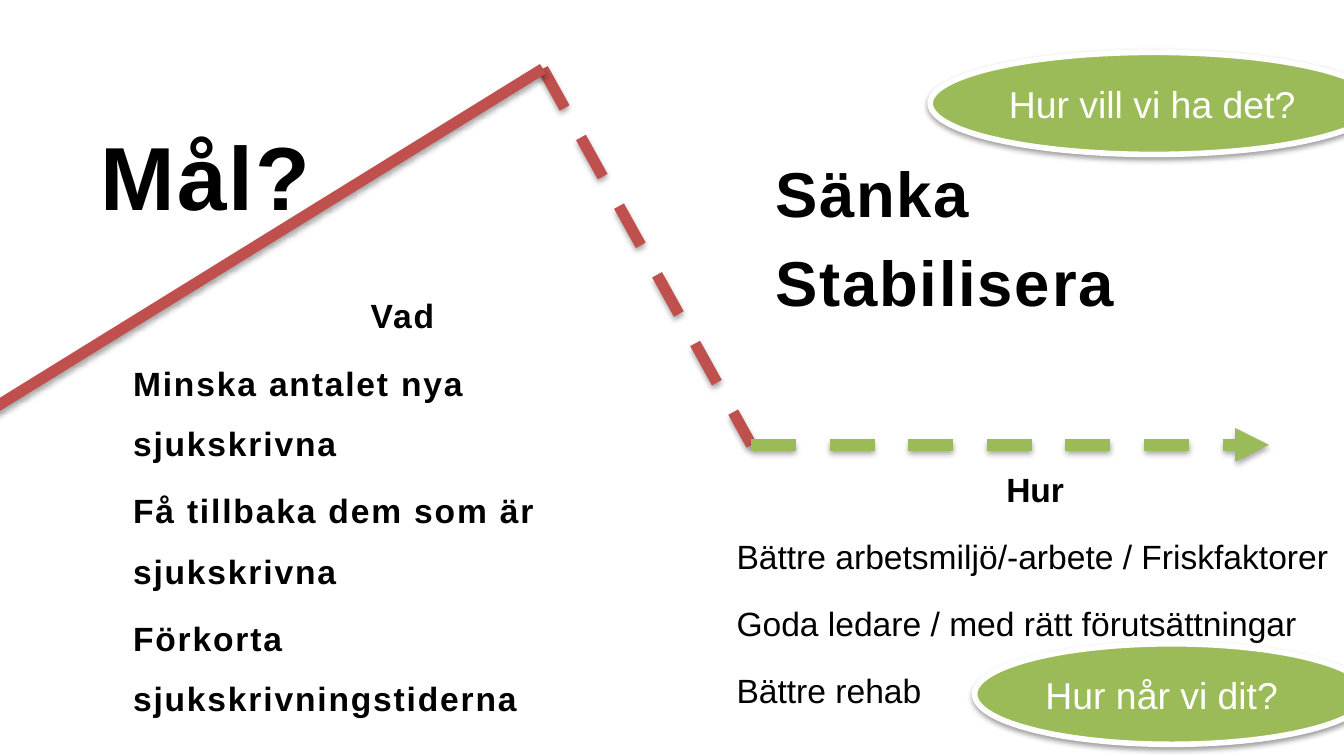
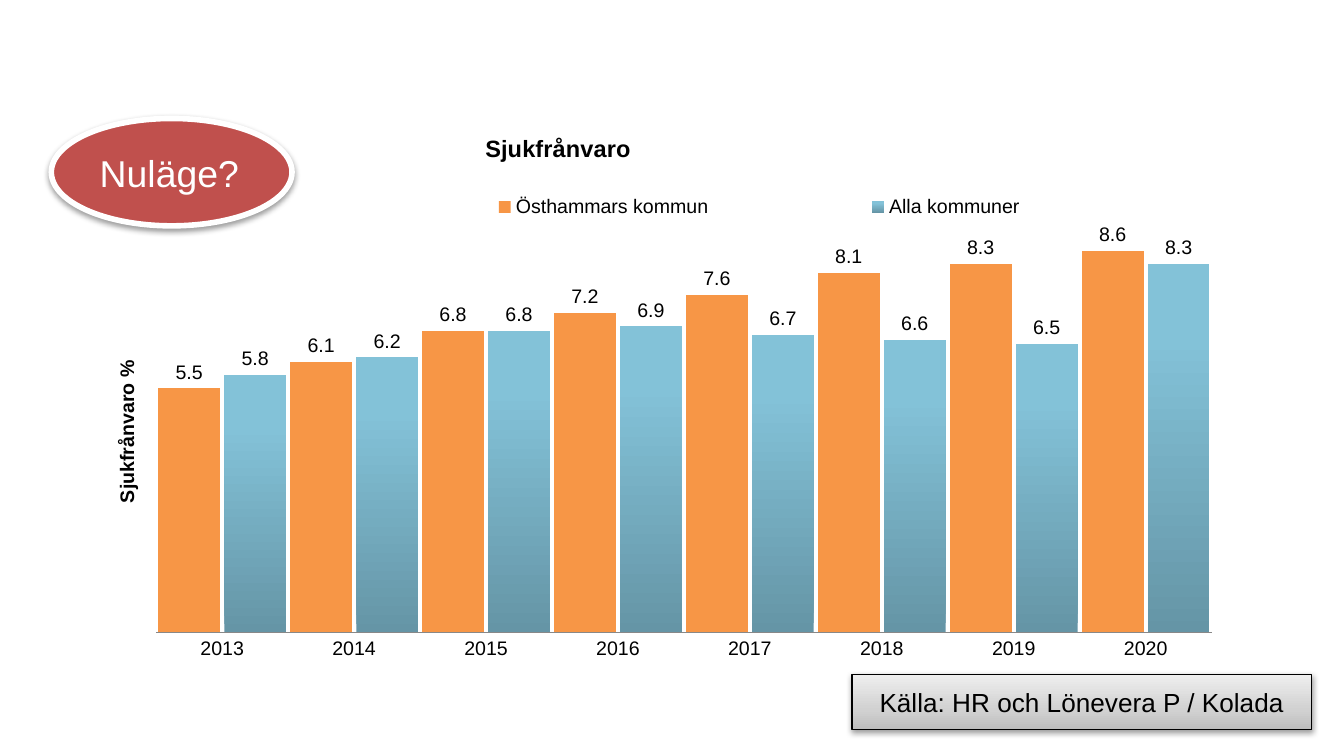
from lxml.etree import SubElement
from pptx import Presentation
from pptx.chart.data import CategoryChartData
from pptx.dml.color import RGBColor
from pptx.enum.chart import XL_CHART_TYPE, XL_LABEL_POSITION, XL_LEGEND_POSITION, XL_TICK_MARK
from pptx.enum.dml import MSO_LINE
from pptx.enum.shapes import MSO_CONNECTOR, MSO_SHAPE
from pptx.enum.text import MSO_ANCHOR, MSO_AUTO_SIZE, PP_ALIGN
from pptx.oxml.ns import qn
from pptx.util import Cm, Pt

FONT = "Arial"
BLACK = RGBColor(0x00, 0x00, 0x00)
WHITE = RGBColor(0xFF, 0xFF, 0xFF)
GREY = RGBColor(0x88, 0x88, 0x88)
RED = RGBColor(0xC0, 0x50, 0x4D)
GREEN = RGBColor(0x9B, 0xBB, 0x59)
ORANGE = RGBColor(0xF7, 0x96, 0x46)
SILVER_STOPS = [
    (0, RGBColor(0xBD, 0xBD, 0xBD)),
    (35, RGBColor(0xD1, 0xD1, 0xD1)),
    (100, RGBColor(0xEE, 0xEE, 0xEE)),
]
BLUE_STOPS = [
    (0, RGBColor(0x65, 0x95, 0xA6)),
    (80, RGBColor(0x83, 0xC2, 0xD8)),
    (100, RGBColor(0x82, 0xC4, 0xDB)),
]

GOAL = ["Mål?"]
AIMS = ["Sänka", "Stabilisera"]
WHAT = [
    "Vad",
    "Minska antalet nya sjukskrivna",
    "Få tillbaka dem som är sjukskrivna",
    "Förkorta sjukskrivningstiderna",
]
HOW = [
    "Hur",
    "Bättre arbetsmiljö/-arbete / Friskfaktorer",
    "Goda ledare / med rätt förutsättningar",
    "Bättre rehab",
]
GOAL_QUESTIONS = [
    ("Hur når vi dit?", (18.42, 12.17, 7.44, 1.9)),
    ("Hur vill vi ha det?", (17.58, 0.99, 8.46, 1.93)),
]
START, PEAK, VALLEY, FUTURE = (-0.58, 8), (10.26, 1.3), (14.2, 8.41), (23.98, 8.41)
TREND = [
    (PEAK, VALLEY, RED, True, False),
    (VALLEY, FUTURE, GREEN, True, True),
    (PEAK, START, RED, False, False),
]

CHART_TITLE = "Sjukfrånvaro"
AXIS_TITLE = "Sjukfrånvaro %"
YEARS = [str(year) for year in range(2013, 2021)]
ABSENCE = {
    "Östhammars kommun": [5.5, 6.1, 6.8, 7.2, 7.6, 8.1, 8.3, 8.6],
    "Alla kommuner": [5.8, 6.2, 6.8, 6.9, 6.7, 6.6, 6.5, 8.3],
}
SOURCE = "Källa: HR och Lönevera P / Kolada"


def write_text(frame, lines, size=18, color=BLACK, bold=False, heading=False,
               line_spacing=None, tracking=0, anchor=MSO_ANCHOR.TOP,
               align=PP_ALIGN.LEFT, top_inset=0.13):
    frame.word_wrap = True
    frame.auto_size = MSO_AUTO_SIZE.NONE
    frame.vertical_anchor = anchor
    frame.margin_top = Cm(top_inset)
    for index, line in enumerate(lines):
        para = frame.paragraphs[0] if index == 0 else frame.add_paragraph()
        is_heading = heading and index == 0
        para.alignment = PP_ALIGN.CENTER if is_heading else align
        para.space_before = Pt(size * 0.2 if index else 0)
        if line_spacing:
            para.line_spacing = line_spacing
        properties = para._p.get_or_add_pPr()
        properties.set("marL", "0")
        properties.set("indent", "0")
        SubElement(properties, qn("a:buNone"))
        span = para.add_run()
        span.text = line
        font = span.font
        font.name, font.size, font.color.rgb = FONT, Pt(size), color
        font.bold = bold or is_heading
        if tracking:
            font._element.set("spc", str(tracking))


def move(shape, area):
    shape.left, shape.top, shape.width, shape.height = map(Cm, area)


def cast_shadow(shape, opacity=38, distance=1.6):
    effects = SubElement(shape._element.spPr, qn("a:effectLst"))
    shadow = SubElement(effects, qn("a:outerShdw"), blurRad=str(Pt(3.1)),
                        dist=str(Pt(distance)), dir="5400000", rotWithShape="0")
    black = SubElement(shadow, qn("a:srgbClr"), val=str(BLACK))
    SubElement(black, qn("a:alpha"), val=str(opacity * 1000))


def fill_gradient(fill, properties, stops):
    fill.gradient()
    gradient = properties.find(qn("a:gradFill"))
    stop_list = gradient.find(qn("a:gsLst"))
    for old_stop in list(stop_list):
        stop_list.remove(old_stop)
    for position, color in stops:
        stop = SubElement(stop_list, qn("a:gs"), pos=str(position * 1000))
        SubElement(stop, qn("a:srgbClr"), val=str(color))
    gradient.find(qn("a:lin")).set("ang", "16200000")


def add_oval(page, text, area, color):
    oval = page.shapes.add_shape(MSO_SHAPE.OVAL, *map(Cm, area))
    oval.fill.solid()
    oval.fill.fore_color.rgb = color
    oval.line.color.rgb = WHITE
    oval.line.width = Pt(3)
    cast_shadow(oval)
    write_text(oval.text_frame, [text], size=20, color=WHITE, anchor=MSO_ANCHOR.MIDDLE)


def add_trend(page):
    group = page.shapes.add_group_shape()
    for begin, end, color, dashed, arrow in TREND:
        line = group.shapes.add_connector(MSO_CONNECTOR.STRAIGHT, *map(Cm, begin + end))
        line.line.color.rgb = color
        line.line.width = Pt(6)
        if dashed:
            line.line.dash_style = MSO_LINE.DASH
        if arrow:
            SubElement(line._element.spPr.find(qn("a:ln")), qn("a:tailEnd"), type="triangle")
        cast_shadow(line, opacity=35, distance=1.8)


def place_part(element, index, inner=False, **position):
    for old_layout in element.findall(qn("c:layout")):
        element.remove(old_layout)
    layout = SubElement(element, qn("c:layout"))
    element.insert(index, layout)
    manual = SubElement(layout, qn("c:manualLayout"))
    if inner:
        SubElement(manual, qn("c:layoutTarget"), val="inner")
    for key in ("x", "y"):
        SubElement(manual, qn(f"c:{key}Mode"), val="edge")
    for key, value in position.items():
        SubElement(manual, qn(f"c:{key}"), val=str(value))


def set_chart_title(owner, title, text, size, **position):
    owner.has_title = True
    write = title.text_frame
    write.text = text
    font = write.paragraphs[0].runs[0].font
    font.name, font.size, font.bold, font.color.rgb = FONT, Pt(size), True, BLACK
    place_part(title._element, 1, **position)


def add_absence_chart(page):
    data = CategoryChartData()
    data.categories = YEARS
    for name, values in ABSENCE.items():
        data.add_series(name, values)
    area = map(Cm, (1.42, 1.42, 21.92, 11.33))
    chart = page.shapes.add_chart(XL_CHART_TYPE.COLUMN_CLUSTERED, *area, data).chart
    chart.font.name, chart.font.size, chart.font.color.rgb = FONT, Pt(10.5), BLACK
    set_chart_title(chart, chart.chart_title, CHART_TITLE, 12.6, x=0.35, y=0.09)

    chart.has_legend = True
    chart.legend.position = XL_LEGEND_POSITION.TOP
    chart.legend.include_in_layout = False
    place_part(chart.legend._element, 1, x=0.23, y=0.19, w=0.72, h=0.06)

    years = chart.category_axis
    years.major_tick_mark = XL_TICK_MARK.NONE
    years.format.line.color.rgb = GREY
    years.format.line.width = Pt(0.75)
    percent = chart.value_axis
    percent.minimum_scale, percent.maximum_scale = 0, 10
    percent.has_major_gridlines = False
    percent.visible = False
    set_chart_title(percent, percent.axis_title, AXIS_TITLE, 10.5, x=0.03, y=0.47)

    plot = chart.plots[0]
    plot.gap_width, plot.overlap, plot.vary_by_categories = 7, -7, False
    place_part(chart._chartSpace.chart.plotArea, 0, inner=True, x=0.07, y=0.19, w=0.91, h=0.74)
    for series in plot.series:
        labels = series.data_labels
        labels.show_value = True
        labels.position = XL_LABEL_POSITION.OUTSIDE_END
        labels.number_format, labels.number_format_is_linked = "#,##0.0", False
        labels.font.name, labels.font.size, labels.font.color.rgb = FONT, Pt(10.5), BLACK
    own, others = plot.series
    own.format.fill.solid()
    own.format.fill.fore_color.rgb = ORANGE
    fill = others.format.fill
    fill_gradient(fill, others._element.find(qn("c:spPr")), BLUE_STOPS)


def build_goal_page(deck):
    page = deck.slides.add_slide(deck.slide_layouts[3])
    title, aims, what = page.placeholders
    move(title, (1.65, 1.98, 17.93, 1.27))
    write_text(title.text_frame, GOAL, size=48, bold=True, tracking=100, top_inset=0.3)
    move(aims, (14.4, 2.67, 8.99, 3.73))
    write_text(aims.text_frame, AIMS, size=34, bold=True, tracking=100, top_inset=0.25)
    add_trend(page)
    move(what, (2.26, 5, 10.69, 5.16))
    write_text(what.text_frame, WHAT, bold=True, heading=True, line_spacing=1.5,
               tracking=100, top_inset=0.2)
    how = page.shapes.add_textbox(*map(Cm, (13.67, 8.66, 11.79, 4.93)))
    write_text(how.text_frame, HOW, heading=True, line_spacing=1.5, top_inset=0.2)
    how.text_frame.paragraphs[0].line_spacing = 1.0
    for text, area in GOAL_QUESTIONS:
        add_oval(page, text, area, GREEN)


def build_status_page(deck):
    page = deck.slides.add_slide(deck.slide_layouts[6])
    source = page.shapes.add_shape(MSO_SHAPE.RECTANGLE, *map(Cm, (16.1, 12.75, 8.69, 1.04)))
    fill_gradient(source.fill, source._element.spPr, SILVER_STOPS)
    source.line.color.rgb = BLACK
    source.line.width = Pt(0.75)
    cast_shadow(source)
    write_text(source.text_frame, [SOURCE], size=14, anchor=MSO_ANCHOR.MIDDLE,
               align=PP_ALIGN.CENTER)
    add_absence_chart(page)
    add_oval(page, "Nuläge?", (0.97, 2.24, 4.55, 2.03), RED)


def main():
    deck = Presentation()
    deck.slide_width, deck.slide_height = Cm(25.4), Cm(14.29)
    build_goal_page(deck)
    build_status_page(deck)
    deck.save("out.pptx")


if __name__ == "__main__":
    main()
